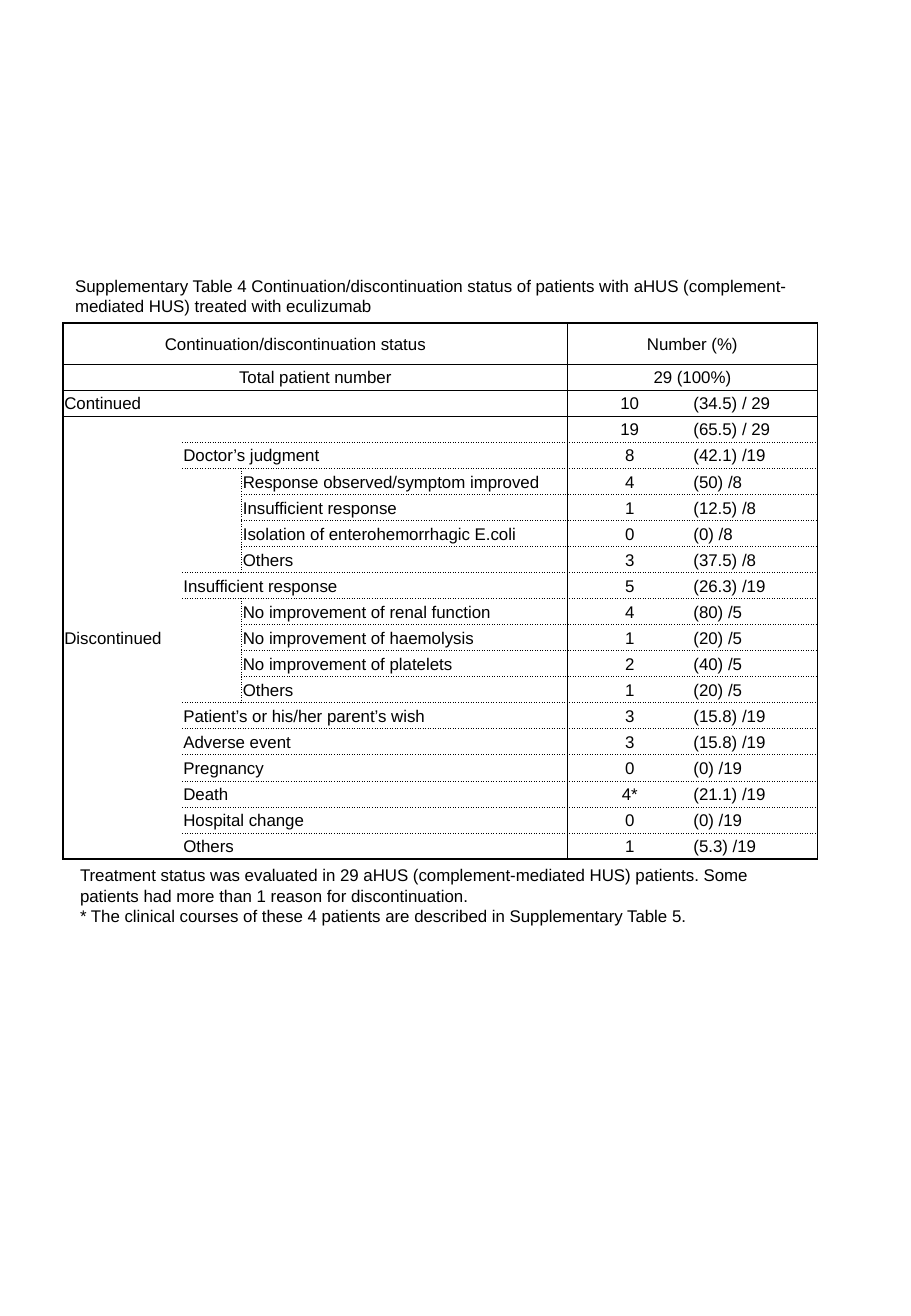
from lxml import etree
from pptx import Presentation
from pptx import util as u
from pptx.dml.color import RGBColor
from pptx.enum import text
from pptx.oxml.ns import qn

BLACK = RGBColor(0, 0, 0)
WHITE = RGBColor(255, 255, 255)
FONT, SIZE = "Arial", u.Pt(10)

TITLE = ["Supplementary Table 4 Continuation/discontinuation status of patients "
         "with aHUS (complement-mediated HUS) treated with eculizumab"]
NOTES = ["Treatment status was evaluated in 29 aHUS (complement-mediated HUS) patients. "
         "Some patients had more than 1 reason for discontinuation.",
         "* The clinical courses of these 4 patients are described in Supplementary Table 5."]

# Level of the label, label, number, share; HEAD rows span the label columns
HEAD = -1
ROWS = [
    (HEAD, "Continuation/discontinuation status", "Number (%)", ""),
    (HEAD, "Total patient number", "29 (100%)", ""),
    (0, "Continued", "10", "(34.5) / 29"),
    (0, "Discontinued", "19", "(65.5) / 29"),
    (1, "Doctor’s judgment", "8", "(42.1) /19"),
    (2, "Response observed/symptom improved", "4", "(50) /8"),
    (2, "Insufficient response", "1", "(12.5) /8"),
    (2, "Isolation of enterohemorrhagic E.coli", "0", "(0) /8"),
    (2, "Others", "3", "(37.5) /8"),
    (1, "Insufficient response", "5", "(26.3) /19"),
    (2, "No improvement of renal function", "4", "(80) /5"),
    (2, "No improvement of haemolysis", "1", "(20) /5"),
    (2, "No improvement of platelets", "2", "(40) /5"),
    (2, "Others", "1", "(20) /5"),
    (1, "Patient’s or his/her parent’s wish", "3", "(15.8) /19"),
    (1, "Adverse event", "3", "(15.8) /19"),
    (1, "Pregnancy", "0", "(0) /19"),
    (1, "Death", "4*", "(21.1) /19"),
    (1, "Hospital change", "0", "(0) /19"),
    (1, "Others", "1", "(5.3) /19"),
]
LEVELS = [row[0] for row in ROWS]
FIRST_REASON = 4  # row where the dotted lines begin
COLS = [0.98, 0.49, 0.77, 1.91, 1.03, 1.03]
LEFT, TOP, WIDTH, HEIGHT = 0.52, 2.66, 6.22, 4.41
HEAD_H = 0.34
ROW_H = (HEIGHT - HEAD_H) / (len(ROWS) - 1)
THICK, THIN, DOTTED = (1, "solid"), (0.5, "solid"), (0.5, "dot")


def horizontal(y, col):
    """Line above row y in a column."""
    if y in (0, 1, len(ROWS)):
        return THICK
    if y < FIRST_REASON:
        return THIN
    nested = LEVELS[y - 1] == LEVELS[y] == 2
    return None if col == 0 or (col == 1 and nested) else DOTTED


def vertical(x, row):
    """Line left of column x in a row."""
    if x in (0, len(COLS)):
        return THICK
    if x == 4:
        return THIN
    return DOTTED if x == 2 and LEVELS[row] == 2 else None


def draw_border(cell, side, line):
    ln = etree.SubElement(cell._tc.get_or_add_tcPr(), qn("a:ln" + side))
    if line is None:
        etree.SubElement(ln, qn("a:noFill"))
        return
    ln.set("w", str(u.Pt(line[0])))
    fill = etree.SubElement(ln, qn("a:solidFill"))
    etree.SubElement(fill, qn("a:srgbClr")).set("val", str(BLACK))
    etree.SubElement(ln, qn("a:prstDash")).set("val", line[1])


def style_runs(p):
    for r in p.runs:
        r.font.name, r.font.size, r.font.color.rgb = FONT, SIZE, BLACK


def add_text(s, lines, top, height, indent=0):
    tf = s.shapes.add_textbox(u.Inches(LEFT), u.Inches(top),
                              u.Inches(WIDTH), u.Inches(height)).text_frame
    tf.word_wrap = True
    tf.text = "\n".join(lines)
    for p in tf.paragraphs:
        if indent:
            p._p.get_or_add_pPr().set("marL", str(u.Inches(indent)))
        style_runs(p)


def style_cell(cell, row, col):
    cell.margin_left = cell.margin_right = cell.margin_top = u.Inches(0.01)
    cell.margin_bottom = 0
    cell.vertical_anchor = text.MSO_ANCHOR.MIDDLE
    high, wide = (cell.span_height, cell.span_width) if cell.is_merge_origin else (1, 1)
    draw_border(cell, "L", vertical(col, row))
    draw_border(cell, "R", vertical(col + wide, row))
    draw_border(cell, "T", horizontal(row, col))
    draw_border(cell, "B", horizontal(row + high, col))
    cell.fill.solid()
    cell.fill.fore_color.rgb = WHITE
    p = cell.text_frame.paragraphs[0]
    if p.runs:
        style_runs(p)
    else:  # keeps empty cells as low as the row
        etree.SubElement(p._p, qn("a:endParaRPr")).set("sz", str(int(SIZE.pt * 100)))
    if col == 4 or LEVELS[row] == HEAD:
        p.alignment = text.PP_ALIGN.CENTER


def add_status_table(s):
    tbl = s.shapes.add_table(len(ROWS), len(COLS), u.Inches(LEFT), u.Inches(TOP),
                             u.Inches(WIDTH), u.Inches(HEIGHT)).table
    tbl.first_row = tbl.horz_banding = False
    for column, width in zip(tbl.columns, COLS):
        column.width = u.Inches(width)
    for i, row in enumerate(tbl.rows):
        row.height = u.Inches(ROW_H if i else HEAD_H)

    # Merges and wording
    tbl.cell(3, 0).merge(tbl.cell(len(ROWS) - 1, 0))
    for i, (level, label, number, share) in enumerate(ROWS):
        start = max(level, 0)
        if level == HEAD:
            tbl.cell(i, 4).merge(tbl.cell(i, 5))
        if level:
            tbl.cell(i, start).merge(tbl.cell(i, 3))
        elif i < FIRST_REASON - 1:
            tbl.cell(i, 0).merge(tbl.cell(i, 1))
        for col, wording in ((start, label), (4, number), (5, share)):
            if wording:
                tbl.cell(i, col).text_frame.text = wording

    for i in range(len(ROWS)):
        for col in range(len(COLS)):
            style_cell(tbl.cell(i, col), i, col)
    tbl.cell(0, 0).margin_right = u.Inches(0.34)  # heading sits left of centre


def main():
    prs = Presentation()
    prs.slide_width, prs.slide_height = u.Inches(7.5), u.Inches(10.83)
    s = prs.slides.add_slide(prs.slide_layouts[6])
    add_status_table(s)
    add_text(s, NOTES, TOP + HEIGHT, 0.61, indent=0.04)
    add_text(s, TITLE, TOP - 0.44, 0.44)
    prs.save("out.pptx")


if __name__ == "__main__":
    main()
